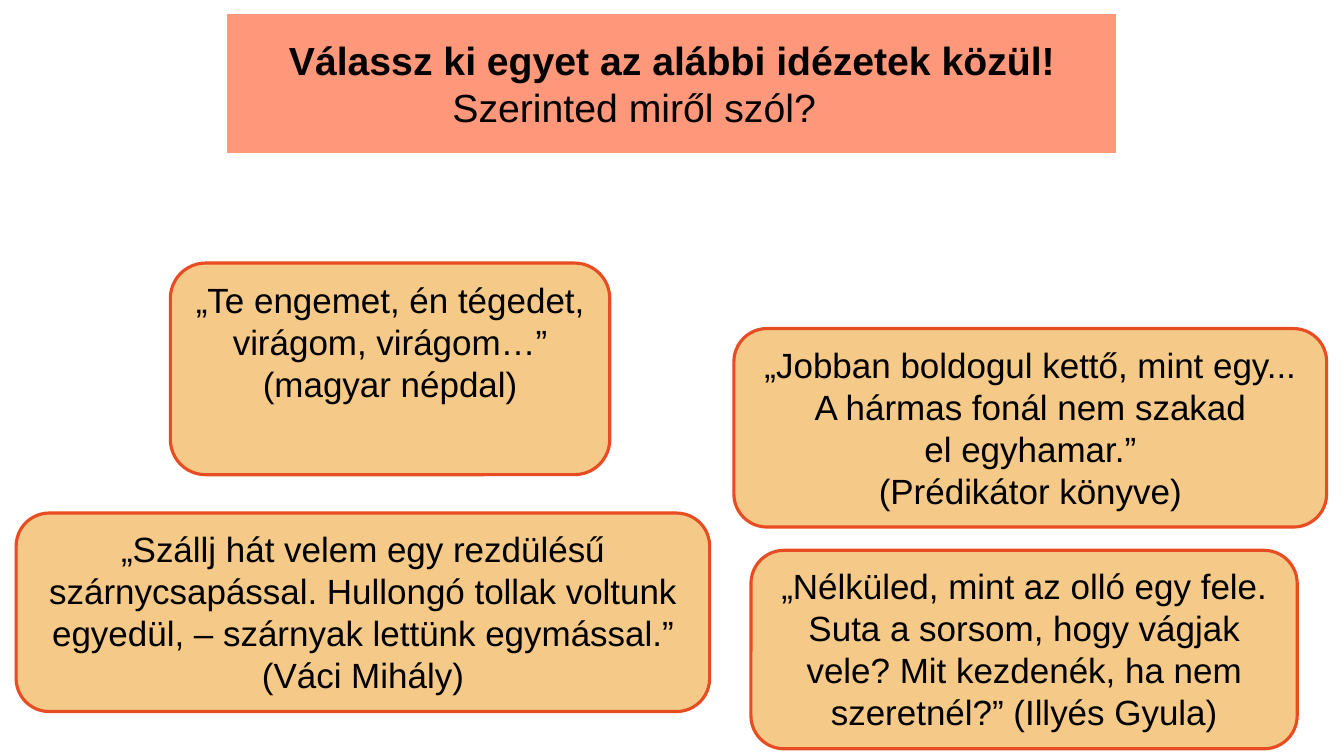
from dataclasses import dataclass

from lxml import etree
from pptx import Presentation
from pptx.dml.color import RGBColor
from pptx.enum.shapes import MSO_SHAPE
from pptx.enum.text import MSO_ANCHOR, MSO_AUTO_SIZE, PP_ALIGN
from pptx.oxml.ns import qn
from pptx.util import Pt

ROUNDED = MSO_SHAPE.ROUNDED_RECTANGLE
TOP, MIDDLE = MSO_ANCHOR.TOP, MSO_ANCHOR.MIDDLE
LEFT, CENTER = PP_ALIGN.LEFT, PP_ALIGN.CENTER
FIXED_SIZE = MSO_AUTO_SIZE.NONE
TITLE_ONLY = 5


@dataclass(frozen=True)
class Theme:
    font: str = "Arial"
    title_size: float = 28
    quote_size: float = 25
    text: RGBColor = RGBColor(0x00, 0x00, 0x00)
    title_fill: RGBColor = RGBColor(0xFF, 0x97, 0x7A)
    title_line: RGBColor = RGBColor(0xFF, 0xFF, 0xFF)
    card_fill: RGBColor = RGBColor(0xF1, 0xB0, 0x51)
    card_line: RGBColor = RGBColor(0xE8, 0x4C, 0x22)
    card_opacity: int = 68


THEME = Theme()

TITLE_BOX = (162, 9.4, 635.8, 100.1)
TITLE = "Válassz ki egyet az alábbi idézetek közül!"
QUESTION = "Szerinted miről szól?"
QUESTION_INDENT = 154

QUOTES = [
    ((121.7, 187.9, 313.9, 151.2),
     ["„Te engemet, én tégedet, virágom, virágom…” (magyar népdal)"]),
    ((536.4, 393.1, 390.2, 141.8),
     ["„Nélküled, mint az olló egy fele. Suta a sorsom, hogy vágjak vele? "
      "Mit kezdenék, ha nem szeretnél?” (Illyés Gyula)"]),
    ((524.2, 234.7, 423.4, 141.8),
     ["„Jobban boldogul kettő, mint egy... A hármas fonál nem szakad\vel egyhamar.”",
      "(Prédikátor könyve)"]),
    ((11.5, 366.5, 495.4, 141.8),
     ["„Szállj hát velem egy rezdülésű szárnycsapással. Hullongó tollak voltunk "
      "egyedül, – szárnyak lettünk egymással.” (Váci Mihály)"]),
]


def paint(shape, fill, line, line_width):
    shape.fill.solid()
    shape.fill.fore_color.rgb = fill
    shape.line.color.rgb = line
    shape.line.width = Pt(line_width)


def set_opacity(shape, percent):
    color = shape.fill._xPr.find(qn("a:solidFill"))[0]
    etree.SubElement(color, qn("a:alpha"), val=str(percent * 1000))


def write(shape, lines, size, anchor):
    frame = shape.text_frame
    frame.word_wrap = True
    frame.auto_size = FIXED_SIZE
    frame.vertical_anchor = anchor
    frame.text = "\n".join(lines)
    for paragraph in frame.paragraphs:
        paragraph.alignment = CENTER
        paragraph.font.name = THEME.font
        paragraph.font.size = Pt(size)
        paragraph.font.color.rgb = THEME.text
    return frame.paragraphs


def add_title(slide):
    title = slide.shapes.title
    title.left, title.top, title.width, title.height = map(Pt, TITLE_BOX)
    geometry = etree.SubElement(title.element.spPr, qn("a:prstGeom"), prst="roundRect")
    etree.SubElement(geometry, qn("a:avLst"))
    paint(title, THEME.title_fill, THEME.title_line, 1)
    heading, question = write(title, [TITLE, QUESTION], THEME.title_size, MIDDLE)
    heading.font.bold = True
    question.alignment = LEFT
    question._p.get_or_add_pPr().set("marL", str(Pt(QUESTION_INDENT)))


def add_quote(slide, box, lines):
    card = slide.shapes.add_shape(ROUNDED, *map(Pt, box))
    card.shadow.inherit = False
    paint(card, THEME.card_fill, THEME.card_line, 2.25)
    set_opacity(card, THEME.card_opacity)
    write(card, lines, THEME.quote_size, TOP)


def main():
    presentation = Presentation()
    presentation.slide_width = Pt(960)
    presentation.slide_height = Pt(540)
    slide = presentation.slides.add_slide(presentation.slide_layouts[TITLE_ONLY])
    add_title(slide)
    for box, lines in QUOTES:
        add_quote(slide, box, lines)
    presentation.save("out.pptx")


if __name__ == "__main__":
    main()
